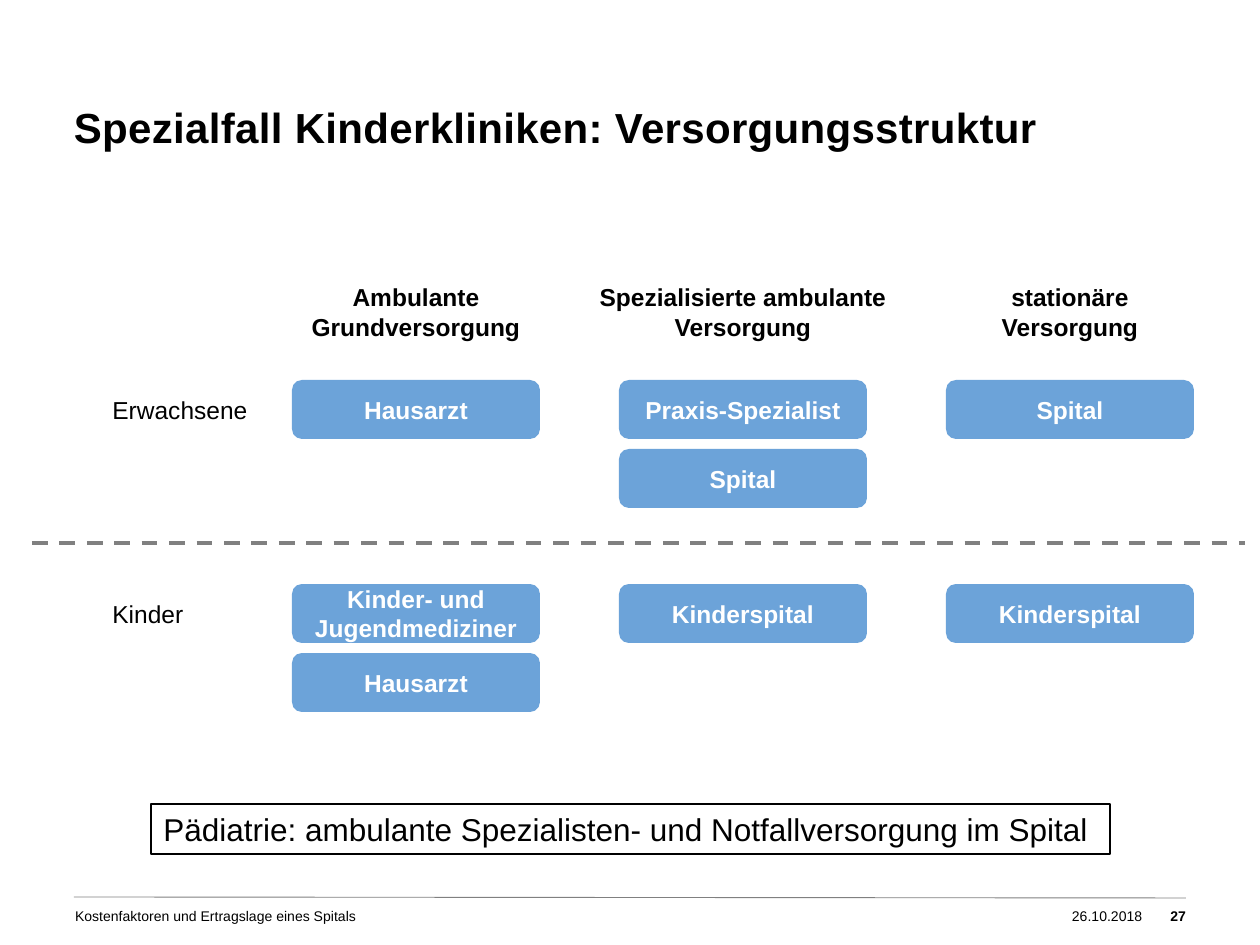
from lxml.etree import SubElement
from pptx import Presentation
from pptx.dml.color import RGBColor
from pptx.enum.dml import MSO_LINE
from pptx.enum.shapes import MSO_CONNECTOR, MSO_SHAPE
from pptx.enum.text import MSO_ANCHOR, PP_ALIGN
from pptx.oxml.ns import qn
from pptx.util import Pt

COLORS = {"text": "000000", "light": "FFFFFF", "box": "6CA3D9", "rule": "808080"}
TITLE = "Spezialfall Kinderkliniken: Versorgungsstruktur"
# Column heading and the width of its text box
COLUMNS = [
    ("Ambulante Grundversorgung", 238),
    ("Spezialisierte ambulante Versorgung", 318),
    ("stationäre Versorgung", 228),
]
# Patient group, top of its row, providers stacked in each column
GROUPS = [
    ("Erwachsene", 380, [["Hausarzt"], ["Praxis-Spezialist", "Spital"], ["Spital"]]),
    ("Kinder", 584, [["Kinder- und Jugendmediziner", "Hausarzt"],
                     ["Kinderspital"], ["Kinderspital"]]),
]
CONCLUSION = "Pädiatrie: ambulante Spezialisten- und Notfallversorgung im Spital"
# Footer text, left, width, alignment, bold
FOOTER = [
    ("Kostenfaktoren und Ertragslage eines Spitals", 75, 904, PP_ALIGN.LEFT, False),
    ("26.10.2018", 1072, 90, PP_ALIGN.LEFT, False),
    ("27", 1152, 34, PP_ALIGN.RIGHT, True),
]
FIRST_LEFT, COLUMN_STEP, STACK_STEP = 292, 327, 69
BOX_WIDTH, BOX_HEIGHT = 248, 59


def px(length):
    return round(length * 914400 / 126)


def color(name):
    return RGBColor.from_string(COLORS[name])


def write(shape, text, size, ink="text", bold=False, align=PP_ALIGN.LEFT, wrap=True):
    frame = shape.text_frame
    frame.word_wrap = wrap
    para = frame.paragraphs[0]
    para.text = text
    para.alignment = align
    para.font.name = "Arial"
    para.font.size = Pt(size)
    para.font.bold = bold
    para.font.color.rgb = color(ink)
    return frame


def add_text(left, top, width, height, text, size, inset=True, **style):
    box = page.shapes.add_textbox(px(left), px(top), px(width), px(height))
    frame = write(box, text, size, **style)
    if not inset:
        frame.margin_left = frame.margin_right = 0
        frame.margin_top = frame.margin_bottom = 0
    return box


def add_provider(left, top, text):
    box = page.shapes.add_shape(MSO_SHAPE.ROUNDED_RECTANGLE, px(left), px(top),
                                px(BOX_WIDTH), px(BOX_HEIGHT))
    box.shadow.inherit = False
    box.fill.solid()
    box.fill.fore_color.rgb = color("box")
    box.line.fill.background()
    frame = write(box, text, 14, ink="light", bold=True, align=PP_ALIGN.CENTER)
    frame.vertical_anchor = MSO_ANCHOR.MIDDLE


def add_rule(left, top, right, bottom, width):
    rule = page.shapes.add_connector(MSO_CONNECTOR.STRAIGHT, px(left), px(top),
                                     px(right), px(bottom))
    rule.line.color.rgb = color("rule")
    rule.line.width = Pt(width)
    SubElement(rule._element.spPr, qn("a:effectLst"))
    return rule


deck = Presentation()
deck.slide_width, deck.slide_height = px(1260), px(945)
page = deck.slides.add_slide(deck.slide_layouts[6])

# Footer
add_rule(74, 897, 1186, 898, 0.5)
for text, left, width, align, bold in FOOTER:
    add_text(left, 908, width, 35, text, 8, inset=False, bold=bold, align=align, wrap=False)

# Title, slightly letter-spaced
title = add_text(74, 101, 1111, 110, TITLE, 24, inset=False, bold=True)
title.text_frame.paragraphs[0].runs[0].font._element.set("spc", "20")

# Column headings, centred over their boxes
for column, (heading, width) in enumerate(COLUMNS):
    center = FIRST_LEFT + column * COLUMN_STEP + BOX_WIDTH / 2
    add_text(center - width / 2, 276, width, 72, heading, 14,
             bold=True, align=PP_ALIGN.CENTER)

# Patient groups with their providers
for group, top, stacks in GROUPS:
    add_text(100, top + 9, 189, 43, group, 14)
    for column, stack in enumerate(stacks):
        for level, provider in enumerate(stack):
            add_provider(FIRST_LEFT + column * COLUMN_STEP, top + level * STACK_STEP, provider)

# Divider between the groups
add_rule(32, 543, 1245, 543, 2.25).line.dash_style = MSO_LINE.DASH

# Conclusion
conclusion = add_text(151, 804, 959, 50, CONCLUSION, 18, wrap=False)
conclusion.line.color.rgb = color("text")
conclusion.line.width = Pt(0.75)

deck.save("out.pptx")
